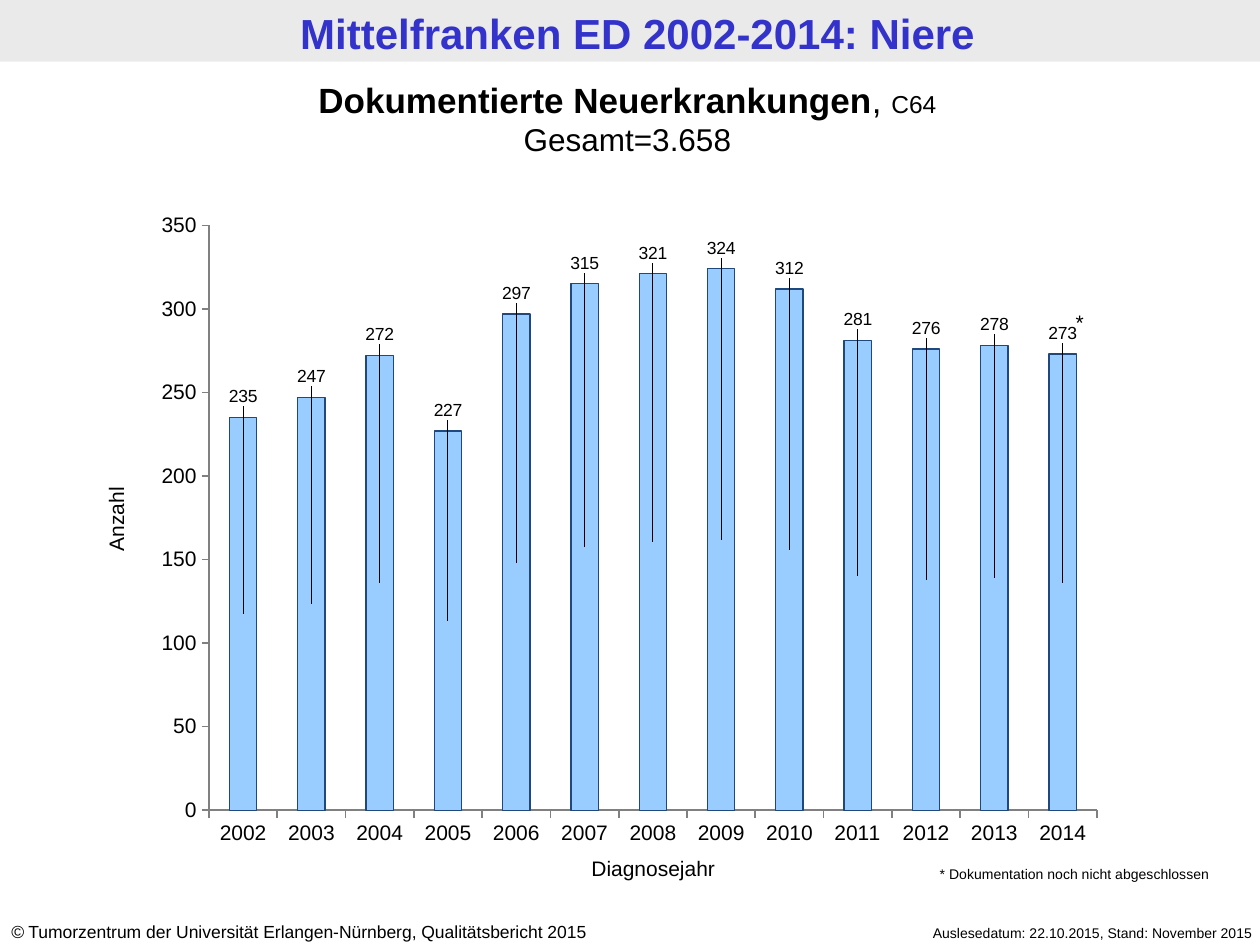
from lxml import etree
from pptx import Presentation
from pptx.chart.data import CategoryChartData
from pptx.dml.color import RGBColor
from pptx.enum.chart import XL_CHART_TYPE as Chart, XL_LABEL_POSITION as Pos, XL_TICK_MARK as Tick
from pptx.enum.shapes import MSO_SHAPE as Shape
from pptx.enum.text import PP_ALIGN as Align
from pptx.oxml.ns import qn
from pptx.util import Inches, Pt

COLS, ROWS = 100, 75
CASES = [235, 247, 272, 227, 297, 315, 321, 324, 312, 281, 276, 278, 273]
AXIS_MAX = 350
PLOT = dict(x=0.066, y=0.029, w=0.914, h=0.903)  # shares of the chart frame
LABEL_GAP = 0.032  # label centre above the bar top, share of chart height


def rgb(value):
    return RGBColor.from_string(value)


def add_layout(parent, index, target=None, modes=(), **shares):
    """Insert a manual chart layout into parent at the given child index."""
    layout = etree.Element(qn("c:layout"))
    manual = etree.SubElement(layout, qn("c:manualLayout"))
    if target:
        etree.SubElement(manual, qn("c:layoutTarget"), val=target)
    for mode in modes:
        etree.SubElement(manual, qn(f"c:{mode}"), val="edge")
    for name, share in shares.items():
        etree.SubElement(manual, qn(f"c:{name}"), val=f"{share:.4f}")
    parent.insert(index, layout)


class Deck:
    font, ink, blue = "Arial", "000000", "3333CC"
    band, bar, outline, axis = "EAEAEA", "99CCFF", "1F497D", "808080"

    def __init__(self, prs):
        self.prs = prs
        self.s = prs.slides.add_slide(prs.slide_layouts[6])

    def box(self, col, row, cols, rows):
        w, h = self.prs.slide_width / COLS, self.prs.slide_height / ROWS
        return [round(n) for n in (col * w, row * h, cols * w, rows * h)]

    def rect(self, area, fill):
        sp = self.s.shapes.add_shape(Shape.RECTANGLE, *self.box(*area))
        sp.shadow.inherit = False
        sp.fill.solid()
        sp.fill.fore_color.rgb = rgb(fill)
        sp.line.fill.background()

    def text(self, area, *paragraphs, align=Align.LEFT, color=ink, turn=0):
        """Each paragraph is a list of runs: (text, size, style letters)."""
        sp = self.s.shapes.add_textbox(*self.box(*area))
        sp.rotation = turn
        tf = sp.text_frame
        tf.word_wrap = True
        for i, runs in enumerate(paragraphs):
            p = tf.add_paragraph() if i else tf.paragraphs[0]
            p.alignment = align
            for words, size, style in runs:
                r = p.add_run()
                r.text = words
                r.font.name, r.font.size = self.font, Pt(size)
                r.font.bold, r.font.italic = "b" in style, "i" in style
                r.font.color.rgb = rgb(color)

    def style_font(self, font, size):
        font.name, font.size = self.font, Pt(size)
        font.color.rgb = rgb(self.ink)

    def columns(self, area, cats, vals):
        data = CategoryChartData()
        data.categories = cats
        data.add_series("Neuerkrankungen", vals)
        chart = self.s.shapes.add_chart(Chart.COLUMN_STACKED, *self.box(*area), data).chart
        chart.has_legend = chart.has_title = False
        self.style_font(chart.font, 12)
        plot_area = chart._chartSpace.xpath("//c:plotArea")[0]
        for old in plot_area.findall(qn("c:layout")):
            plot_area.remove(old)
        add_layout(plot_area, 0, "inner", ("xMode", "yMode"), **PLOT)

        # Axes
        for axis in (chart.category_axis, chart.value_axis):
            axis.has_major_gridlines = False
            axis.major_tick_mark, axis.minor_tick_mark = Tick.OUTSIDE, Tick.NONE
            axis.format.line.color.rgb = rgb(self.axis)
            axis.format.line.width = Pt(1)
        chart.value_axis.minimum_scale = 0
        chart.value_axis.maximum_scale = AXIS_MAX
        chart.value_axis.major_unit = 50

        # Bars
        plot = chart.plots[0]
        plot.gap_width, plot.overlap, plot.vary_by_categories = 150, 100, False
        series = plot.series[0]
        series.format.fill.solid()
        series.format.fill.fore_color.rgb = rgb(self.bar)
        series.format.line.color.rgb = rgb(self.outline)
        series.format.line.width = Pt(0.75)

        # Labels, lifted from the middle of each bar to above its top
        series.data_labels.show_value = True
        self.style_font(series.data_labels.font, 10)
        for i in range(len(vals)):
            label = series.points[i].data_label
            self.style_font(label.font, 10)
            label.position = Pos.CENTER
        for dlbl, val in zip(chart._chartSpace.xpath("//c:dLbl"), vals):
            half_bar = PLOT["h"] * val / AXIS_MAX / 2
            add_layout(dlbl, 1, x=0, y=-half_bar - LABEL_GAP)


def main():
    prs = Presentation()
    prs.slide_width, prs.slide_height = Inches(10), Inches(7.5)
    d = Deck(prs)

    # Header band and title
    d.rect((0, 0, COLS, 4.9), d.band)
    d.text((0.6, 0.1, COLS, 4.9), [("Mittelfranken ED 2002-2014: Niere", 24, "b")],
           align=Align.CENTER, color=d.blue)

    # Footer
    d.text((66.5, 72.9, 33.9, 2.4),
           [("Auslesedatum: 22.10.2015, Stand: November 2015", 8, "")], align=Align.RIGHT)
    d.text((-0.1, 72.6, 52.4, 2.7),
           [("©", 10, "i"),
            (" Tumorzentrum der Universität Erlangen-Nürnberg, Qualitätsbericht 2015", 10, "")])

    # Chart and its heading
    d.columns((11.5, 16.4, 77.1, 51.4), [str(y) for y in range(2002, 2015)], CASES)
    d.text((-0.4, 5.7, 100.4, 7.4),
           [("Dokumentierte Neuerkrankungen", 20, "b"), (", ", 20, ""), ("C64", 14, "")],
           [("Gesamt=3.658", 18, "")], align=Align.CENTER)

    # Axis titles and footnote
    d.text((40.6, 67.4, 22.5, 3), [("Diagnosejahr", 12, "")], align=Align.CENTER)
    d.text((3.1, 39.7, 12.2, 3), [("Anzahl", 12, "")], align=Align.CENTER, turn=270)
    d.text((83.1, 24.1, 3.9, 3), [("*", 12, "")], align=Align.RIGHT)
    d.text((73.6, 68.2, 24.8, 2.4), [("* Dokumentation noch nicht abgeschlossen", 8, "")])

    prs.save("out.pptx")


if __name__ == "__main__":
    main()
